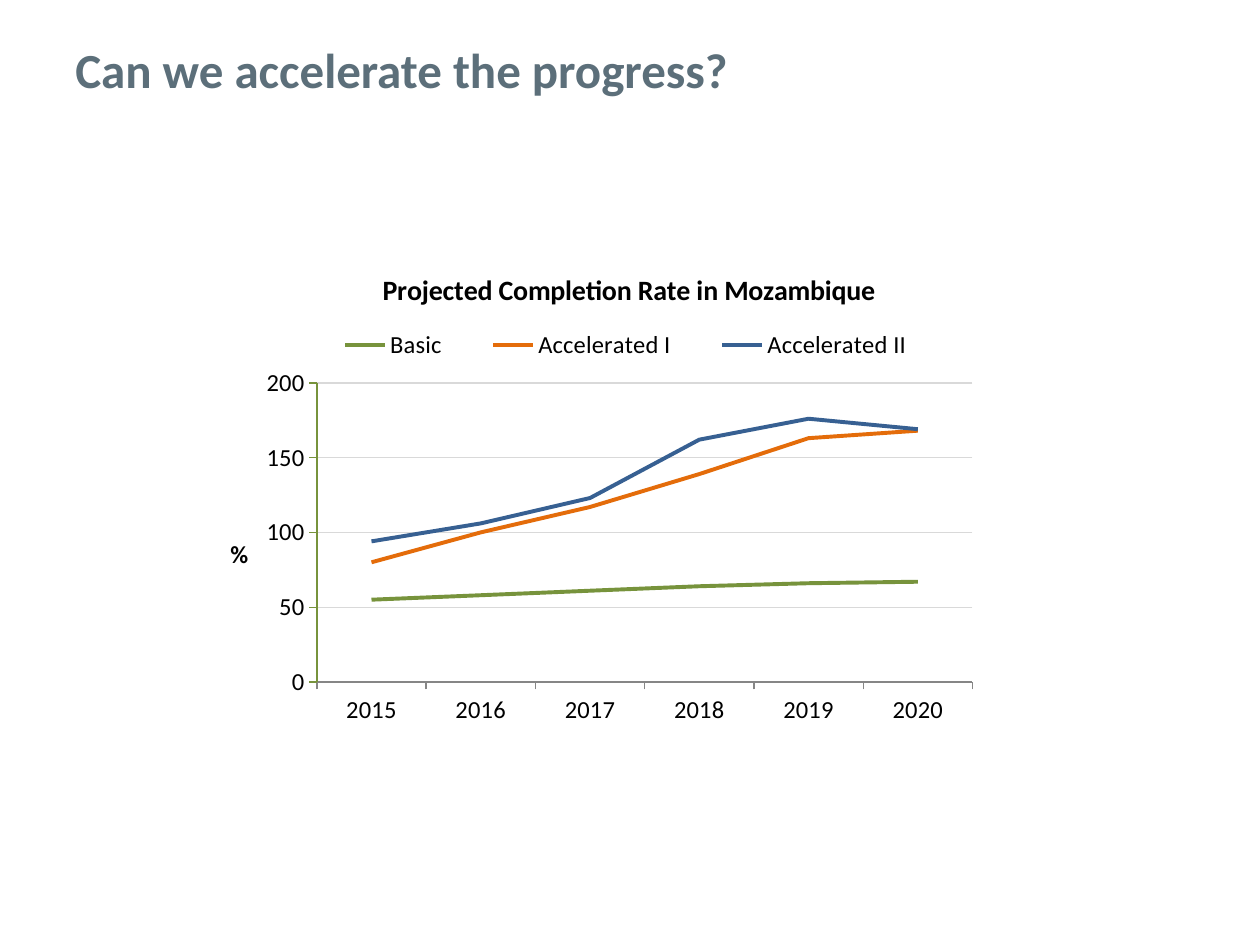
from lxml import etree
from pptx import Presentation
from pptx.chart.data import CategoryChartData
from pptx.dml.color import RGBColor
from pptx.enum.chart import XL_CHART_TYPE, XL_LEGEND_POSITION, XL_TICK_MARK
from pptx.enum.text import MSO_ANCHOR
from pptx.oxml.ns import qn
from pptx.util import Inches, Pt

LINE = XL_CHART_TYPE.LINE
LEGEND_TOP = XL_LEGEND_POSITION.TOP
TICK_OUT = XL_TICK_MARK.OUTSIDE
MIDDLE = MSO_ANCHOR.MIDDLE

FONT = "Calibri"
COLORS = {
    "heading": "5C6F7A",
    "text": "000000",
    "axis": "868686",
    "grid": "D9D9D9",
    "Basic": "77933C",
    "Accelerated I": "E46C0A",
    "Accelerated II": "376092",
}
YEARS = ["2015", "2016", "2017", "2018", "2019", "2020"]
RATES = {
    "Basic": [55, 58, 61, 64, 66, 67],
    "Accelerated I": [80, 100, 117, 139, 163, 168],
    "Accelerated II": [94, 106, 123, 162, 176, 169],
}


def style_font(font, size, color="text", bold=False):
    font.name = FONT
    font.size = Pt(size)
    font.bold = bold
    font.color.rgb = RGBColor.from_string(COLORS[color])


def style_line(line, color, width=0.75):
    line.color.rgb = RGBColor.from_string(COLORS[color])
    line.width = Pt(width)


def add_run(tf, text, size, color="text"):
    r = tf.paragraphs[0].add_run()
    r.text = text
    style_font(r.font, size, color, bold=True)


def set_layout(element, x, y, w=None, h=None, inner=False):
    """Place a chart part by fractions of the chart's size."""
    for old in element.findall(qn("c:layout")):
        element.remove(old)
    layout = etree.Element(qn("c:layout"))
    manual = etree.SubElement(layout, qn("c:manualLayout"))
    values = [("xMode", "edge"), ("yMode", "edge"),
              ("x", x), ("y", y), ("w", w), ("h", h)]
    if inner:
        values.insert(0, ("layoutTarget", "inner"))
    for tag, value in values:
        if value is not None:
            etree.SubElement(manual, qn("c:" + tag)).set("val", str(value))
    overlay = element.find(qn("c:overlay"))
    if overlay is None:
        element.insert(0, layout)
    else:
        overlay.addprevious(layout)


def add_heading(slide, text):
    box = slide.shapes.add_textbox(Inches(0.5), 0, Inches(7.64), Inches(1.09))
    tf = box.text_frame
    tf.word_wrap = True
    tf.vertical_anchor = MIDDLE
    add_run(tf, text, 28, "heading")


def style_axes(chart):
    for axis, color in ((chart.category_axis, "axis"),
                        (chart.value_axis, "Basic")):
        axis.major_tick_mark = TICK_OUT
        style_font(axis.tick_labels.font, 14)
        style_line(axis.format.line, color)

    value_axis = chart.value_axis
    value_axis.minimum_scale = 0
    value_axis.maximum_scale = 200
    value_axis.major_unit = 50
    style_line(value_axis.major_gridlines.format.line, "grid")

    # Upright unit label beside the value axis
    title = value_axis.axis_title
    add_run(title.text_frame, "%", 14)
    body = title.text_frame._txBody.find(qn("a:bodyPr"))
    body.set("rot", "0")
    body.set("vert", "horz")
    set_layout(title._element, 0.02, 0.53)


def add_rate_chart(slide):
    data = CategoryChartData()
    data.categories = YEARS
    for name, values in RATES.items():
        data.add_series(name, values)
    chart = slide.shapes.add_chart(
        LINE, Inches(1.66), Inches(1.94), Inches(6.68), Inches(4.31), data).chart
    style_font(chart.font, 10)

    # Title
    chart.has_title = True
    add_run(chart.chart_title.text_frame,
            "Projected Completion Rate in Mozambique", 16)
    set_layout(chart.chart_title._element, 0.2, 0.04)

    # Legend
    chart.has_legend = True
    chart.legend.position = LEGEND_TOP
    chart.legend.include_in_layout = False
    style_font(chart.legend.font, 14)
    set_layout(chart.legend._element, 0.11, 0.15, 0.77, 0.07)

    # Plot
    style_axes(chart)
    plot_area = chart._chartSpace.chart.plotArea
    set_layout(plot_area, 0.128, 0.255, 0.779, 0.551, inner=True)
    chart.plots[0].vary_by_categories = False
    for series in chart.plots[0].series:
        series.smooth = False
        style_line(series.format.line, series.name, 2.25)


def main():
    prs = Presentation()
    prs.slide_width = Inches(10)
    prs.slide_height = Inches(7.5)
    slide = prs.slides.add_slide(prs.slide_layouts[6])
    add_heading(slide, "Can we accelerate the progress?")
    add_rate_chart(slide)
    prs.save("out.pptx")


if __name__ == "__main__":
    main()
